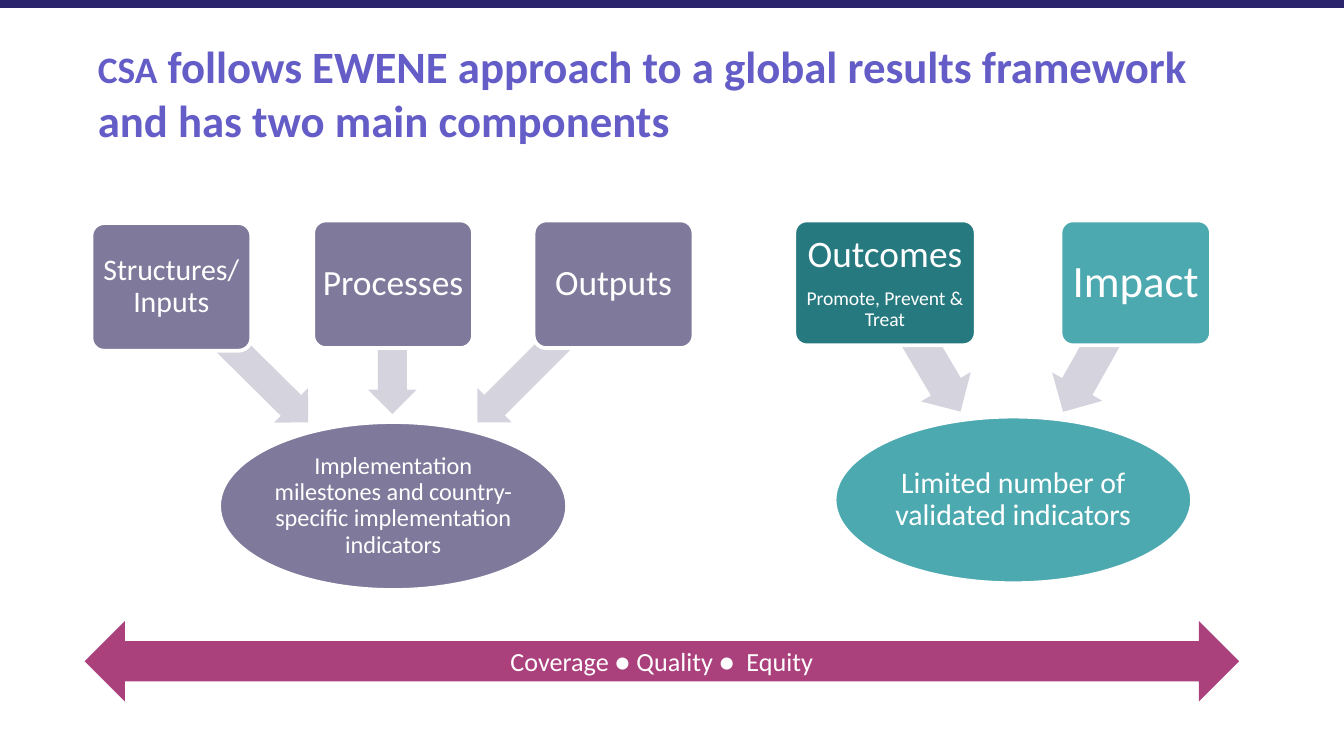
import pptx
import pptx.util
import pptx.dml.color
import pptx.enum.shapes
import pptx.enum.text

Inches = pptx.util.Inches
Pt = pptx.util.Pt
RGBColor = pptx.dml.color.RGBColor
Kind = pptx.enum.shapes.MSO_SHAPE
Anchor = pptx.enum.text.MSO_ANCHOR
Align = pptx.enum.text.PP_ALIGN

NAVY = RGBColor(0x2A, 0x24, 0x6C)
VIOLET = RGBColor(0x64, 0x5D, 0xC7)
MAUVE = RGBColor(0x7F, 0x7A, 0x9B)
TEAL = RGBColor(0x4D, 0xA9, 0xB0)
DEEP = RGBColor(0x26, 0x79, 0x7F)
PALE = RGBColor(0xD5, 0xD4, 0xDE)
PLUM = RGBColor(0xAA, 0x41, 0x7C)
WHITE = RGBColor(0xFF, 0xFF, 0xFF)


class Board:
    face = "Calibri"

    def __init__(self, slide):
        self.slide = slide

    def shape(self, kind, area, fill, edge=None):
        item = self.slide.shapes.add_shape(kind, *map(Inches, area))
        item.shadow.inherit = False
        item.fill.solid()
        item.fill.fore_color.rgb = fill
        if edge is None:
            item.line.fill.background()
        else:
            item.line.color.rgb = edge
            item.line.width = Pt(2)
        return item

    def style(self, font, size, color):
        font.name = self.face
        font.size = Pt(size)
        font.color.rgb = color

    def inset(self, frame, gap):
        frame.margin_left = frame.margin_right = Inches(gap)
        frame.margin_top = frame.margin_bottom = Inches(gap)

    def label(self, item, lines, gap, space=0.9):
        frame = item.text_frame
        frame.word_wrap = True
        frame.vertical_anchor = Anchor.MIDDLE
        self.inset(frame, gap)
        for index, (text, size) in enumerate(lines):
            para = frame.add_paragraph() if index else frame.paragraphs[0]
            para.text = text
            para.alignment = Align.CENTER
            para.line_spacing = space
            if index < len(lines) - 1:
                para.space_after = Pt(size * 0.35)
            self.style(para.font, size, WHITE)

    def title(self, area, parts):
        frame = self.slide.shapes.add_textbox(*map(Inches, area)).text_frame
        frame.word_wrap = True
        self.inset(frame, 0.1)
        para = frame.paragraphs[0]
        para.font.bold = True
        for text, size in parts:
            run = para.add_run()
            run.text = text
            self.style(run.font, size, VIOLET)
            run.font.bold = True

    def oval(self, area, fill, text, size):
        item = self.shape(Kind.OVAL, area, fill, WHITE)
        self.label(item, [(text, size)], 0.01)

    def arrow(self, area, turn):
        item = self.shape(Kind.LEFT_ARROW, area, PALE)
        item.adjustments[0] = 0.6
        item.adjustments[1] = 0.5
        item.rotation = turn

    def box(self, area, fill, lines, gap):
        item = self.shape(Kind.ROUNDED_RECTANGLE, area, fill, WHITE)
        item.adjustments[0] = 0.1
        self.label(item, lines, gap)

    def band(self, area, text, size):
        item = self.shape(Kind.LEFT_RIGHT_ARROW, area, PLUM)
        self.label(item, [(text, size)], 0.05, 1)


def main():
    deck = pptx.Presentation()
    deck.slide_width = Inches(10)
    deck.slide_height = Inches(10) * 9 // 16
    board = Board(deck.slides.add_slide(deck.slide_layouts[6]))

    board.shape(Kind.RECTANGLE, (0, 0, 10, 0.06), NAVY)
    board.title((0.63, 0.19, 8.7, 0.63), [
        ("CSA", 20),
        (" follows EWENE approach to a global results framework"
         " and has two main components", 24),
    ])

    board.oval((1.63, 3.14, 2.59, 1.25), MAUVE,
               "Implementation milestones and country-specific"
               " implementation indicators", 13)
    board.oval((6.21, 3.1, 2.66, 1.24), TEAL,
               "Limited number of validated indicators", 16)

    steps = [
        ((1.07, 2.46, 1.43, 0.36), 224.7, (0.68, 1.66, 1.19, 0.95), MAUVE,
         [("Structures/Inputs", 16)], 0.03),
        ((2.44, 2.42, 0.96, 0.36), 270, (2.33, 1.64, 1.19, 0.95), MAUVE,
         [("Processes", 19)], 0.04),
        ((3.34, 2.45, 1.45, 0.36), 315, (3.97, 1.64, 1.19, 0.95), MAUVE,
         [("Outputs", 19)], 0.04),
        ((6.31, 2.37, 1.11, 0.43), 239.4, (5.91, 1.64, 1.35, 0.93), DEEP,
         [("Outcomes", 20), ("Promote, Prevent & Treat", 10.5)], 0.04),
        ((7.63, 2.37, 1.1, 0.43), 299.4, (7.89, 1.64, 1.12, 0.93), TEAL,
         [("Impact", 24)], 0.05),
    ]
    for way, turn, area, fill, lines, gap in steps:
        board.arrow(way, turn)
        board.box(area, fill, lines, gap)

    board.band((0.63, 4.62, 8.59, 0.6), "Coverage ● Quality ●  Equity", 14)
    deck.save("out.pptx")


if __name__ == "__main__":
    main()
